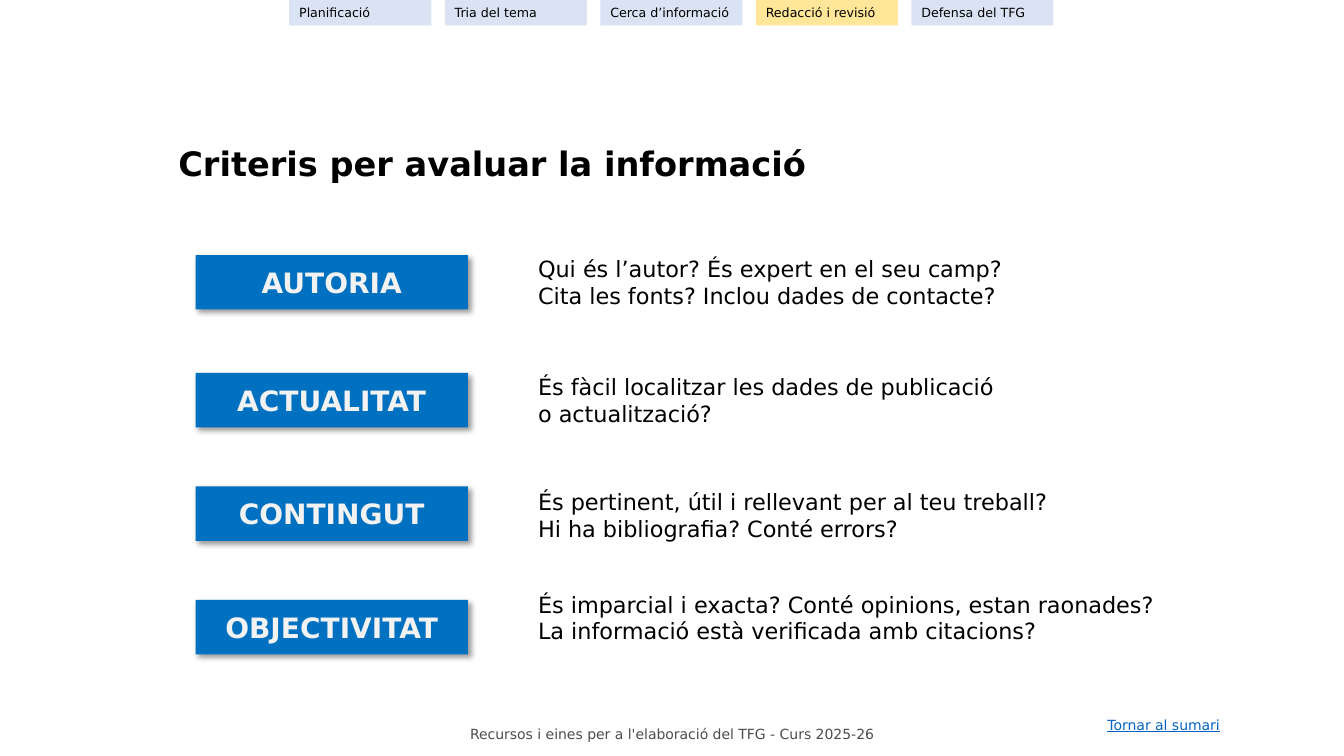
"""Build the slide on criteria for evaluating information."""
from dataclasses import dataclass

from lxml.etree import SubElement
from pptx import Presentation
from pptx.dml.color import RGBColor
from pptx.enum.shapes import MSO_SHAPE
from pptx.enum.text import MSO_ANCHOR, PP_ALIGN
from pptx.oxml.ns import qn
from pptx.util import Cm, Pt

FONT = "DejaVu Sans"
BLACK, BLUE, LIGHT, GREY = "000000", "0070C0", "F2F2F2", "4D4D4D"
LINK, TAB, ACTIVE_TAB = "0563C1", "DAE3F3", "FFE699"


@dataclass
class Box:
    left: float
    top: float
    width: float
    height: float

    def lengths(self) -> tuple:
        return Cm(self.left), Cm(self.top), Cm(self.width), Cm(self.height)


@dataclass
class Style:
    size: float
    color: str = BLACK
    bold: bool = False
    underline: bool = False
    align: PP_ALIGN = PP_ALIGN.LEFT
    anchor: MSO_ANCHOR = MSO_ANCHOR.TOP
    wrap: bool = True


@dataclass
class Criterion:
    name: str
    label_top: float
    text_top: float
    questions: str


CRITERIA = [
    Criterion("AUTORIA", 6.43, 6.3,
              "Qui és l’autor? És expert en el seu camp?\n"
              "Cita les fonts? Inclou dades de contacte?"),
    Criterion("ACTUALITAT", 9.4, 9.27,
              "És fàcil localitzar les dades de publicació\no actualització?"),
    Criterion("CONTINGUT", 12.26, 12.17,
              "És pertinent, útil i rellevant per al teu treball?\n"
              "Hi ha bibliografia? Conté errors?"),
    Criterion("OBJECTIVITAT", 15.12, 14.76,
              "És imparcial i exacta? Conté opinions, estan raonades? "
              "La informació està verificada amb citacions?"),
]
TABS = ["Planificació", "Tria del tema", "Cerca d’informació",
        "Redacció i revisió", "Defensa del TFG"]
ACTIVE = "Redacció i revisió"


def rgb(color: str) -> RGBColor:
    return RGBColor.from_string(color)


def write(sp, text: str, style: Style) -> None:
    tf = sp.text_frame
    tf.text = text
    tf.word_wrap = style.wrap
    tf.vertical_anchor = style.anchor
    for p in tf.paragraphs:
        p.alignment = style.align
        for r in p.runs:
            r.font.name = FONT
            r.font.size = Pt(style.size)
            r.font.bold = style.bold
            r.font.underline = style.underline
            r.font.color.rgb = rgb(style.color)


def add_text(s, box: Box, text: str, style: Style) -> None:
    write(s.shapes.add_textbox(*box.lengths()), text, style)


def add_rect(shapes, box: Box, fill: str, text: str, style: Style):
    sp = shapes.add_shape(MSO_SHAPE.RECTANGLE, *box.lengths())
    sp.shadow.inherit = False
    sp.fill.solid()
    sp.fill.fore_color.rgb = rgb(fill)
    sp.line.fill.background()
    write(sp, text, style)
    return sp


def add_shadow(sp) -> None:
    effects = sp._element.spPr.find(qn("a:effectLst"))
    shadow = SubElement(effects, qn("a:outerShdw"), blurRad=str(Pt(4)),
                        dist=str(Pt(3)), dir="2700000", algn="tl",
                        rotWithShape="0")
    color = SubElement(shadow, qn("a:srgbClr"), val=BLACK)
    SubElement(color, qn("a:alpha"), val="40000")


def add_criterion(s, item: Criterion) -> None:
    style = Style(20, LIGHT, bold=True, align=PP_ALIGN.CENTER,
                  anchor=MSO_ANCHOR.MIDDLE)
    label = add_rect(s.shapes, Box(4.93, item.label_top, 6.86, 1.37), BLUE,
                     item.name, style)
    tf = label.text_frame
    tf.margin_top = tf.margin_bottom = Cm(0.25)
    add_shadow(label)
    add_text(s, Box(13.31, item.text_top, 16.31, 1.63), item.questions, Style(16))


def add_tabs(s) -> None:
    group = s.shapes.add_group_shape()
    style = Style(9, anchor=MSO_ANCHOR.MIDDLE)
    for i, name in enumerate(TABS):
        add_rect(group.shapes, Box(7.29 + 3.92 * i, 0, 3.58, 0.64),
                 ACTIVE_TAB if name == ACTIVE else TAB, name, style)


def main() -> None:
    prs = Presentation()
    prs.slide_width, prs.slide_height = Cm(33.87), Cm(19.05)
    s = prs.slides.add_slide(prs.slide_layouts[5])
    title = s.shapes.title
    title.left, title.top, title.width, title.height = Box(
        4.24, 3.48, 21.21, 1.27).lengths()
    write(title, "Criteris per avaluar la informació",
          Style(24, bold=True, anchor=MSO_ANCHOR.MIDDLE))
    add_text(s, Box(9.53, 18.14, 14.81, 0.69),
             "Recursos i eines per a l'elaboració del TFG - Curs 2025-26",
             Style(10, GREY, align=PP_ALIGN.CENTER, anchor=MSO_ANCHOR.MIDDLE))
    add_text(s, Box(27.66, 17.93, 3.45, 0.69), "Tornar al sumari",
             Style(10, LINK, underline=True, wrap=False))
    for item in CRITERIA:
        add_criterion(s, item)
    add_tabs(s)
    prs.save("out.pptx")


if __name__ == "__main__":
    main()
